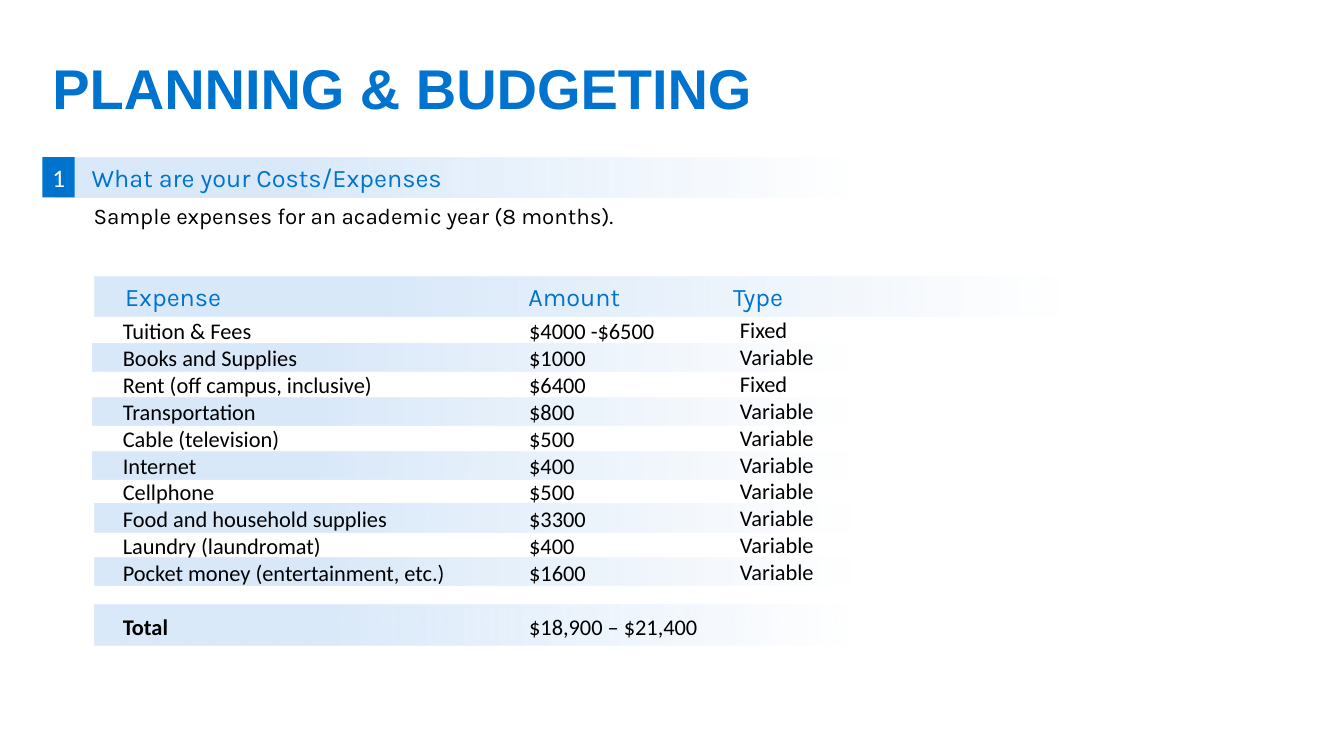
from pptx import Presentation
from pptx.dml.color import RGBColor as Rgb
from pptx.enum.shapes import MSO_SHAPE as Shape
from pptx.enum.text import MSO_ANCHOR as Anchor, MSO_AUTO_SIZE as Fit, PP_ALIGN as Align
from pptx.oxml.ns import qn
from pptx.util import Pt
from lxml.etree import SubElement as add_tag

PX = 9144
HUE = {"blue": "0073CF", "pale": "CFE3F8", "black": "000000", "white": "FFFFFF"}

deck = Presentation()
deck.slide_width, deck.slide_height = 1333 * PX, 750 * PX
slide = deck.slides.add_slide(deck.slide_layouts[5])


def write(shape, text, font="Calibri", size=16, hue="black", bold=False,
          align=Align.LEFT, anchor=Anchor.TOP, inset=10, tabs=(), space=1):
    frame = shape.text_frame
    frame.word_wrap = True
    frame.auto_size = Fit.NONE
    frame.vertical_anchor = anchor
    frame.margin_left = inset * PX
    frame.text = text
    for para in frame.paragraphs:
        para.alignment = align
        para.line_spacing = space
        if tabs:
            stops = add_tag(para._p.get_or_add_pPr(), qn("a:tabLst"))
            for x in tabs:
                add_tag(stops, qn("a:tab"), pos=str(x * PX), algn="l")
        for run in para.runs:
            run.font.name = font
            run.font.size = Pt(size)
            run.font.bold = bold
            run.font.color.rgb = Rgb.from_string(HUE[hue])
    return frame


def add_bar(x, y, w, h, fade=True):
    bar = slide.shapes.add_shape(Shape.RECTANGLE, x * PX, y * PX, w * PX, h * PX)
    bar.shadow.inherit = False
    bar.line.fill.background()
    if fade:
        bar.fill.gradient()
        bar.fill.gradient_angle = 0
        for stop, spot in zip(bar.fill.gradient_stops, (0.3, 1)):
            stop.position = spot
            stop.color.rgb = Rgb.from_string(HUE["pale"])
        tints = bar._element.spPr.iter(qn("a:srgbClr"))
        for tint, alpha in zip(list(tints), ("77000", "0")):
            add_tag(tint, qn("a:alpha"), val=alpha)
    else:
        bar.fill.solid()
        bar.fill.fore_color.rgb = Rgb.from_string(HUE["blue"])
    return bar


title = slide.shapes.title
title.left, title.top, title.width, title.height = 42 * PX, 56 * PX, 1150 * PX, 145 * PX
write(title, "PLANNING & BUDGETING", font="Arial", size=40, hue="blue", bold=True, space=0.9)

head = {"font": "Karla", "size": 18, "hue": "blue", "anchor": Anchor.MIDDLE}
write(add_bar(55, 156, 789, 40), "What are your Costs/Expenses", inset=36, **head)

for x, y, h in ((92, 341, 28), (92, 394, 28), (92, 448, 28),
                (94, 500, 28), (94, 553, 28), (94, 600, 40)):
    add_bar(x, y, 750, h)

note = slide.shapes.add_textbox(83 * PX, 196 * PX, 687 * PX, 40 * PX)
write(note, "Sample expenses for an academic year (8 months).", font="Karla")

write(add_bar(94, 274, 958, 40), "Expense\tAmount\tType", inset=30, tabs=(400, 603), **head)

costs = (
    ("Tuition & Fees", "$4000 -$6500", "Fixed"),
    ("Books and Supplies", "$1000", "Variable"),
    ("Rent (off campus, inclusive)", "$6400", "Fixed"),
    ("Transportation", "$800", "Variable"),
    ("Cable (television)", "$500", "Variable"),
    ("Internet", "$400", "Variable"),
    ("Cellphone", "$500", "Variable"),
    ("Food and household supplies", "$3300", "Variable"),
    ("Laundry (laundromat)", "$400", "Variable"),
    ("Pocket money (entertainment, etc.)", "$1600", "Variable"),
)
names, sums, types = zip(*costs)
for x, y, h, items, total in ((112, 310, 394, names, "Total"),
                              (515, 310, 394, sums, "$18,900 – $21,400"),
                              (724, 309, 367, types, "")):
    box = slide.shapes.add_textbox(x * PX, y * PX, 442 * PX, h * PX)
    lines = items + (total,) if total else items
    frame = write(box, "\n".join(lines))
    if total:
        last = frame.paragraphs[-1]
        last.space_before = Pt(19)
        last.runs[0].font.bold = total == "Total"

write(add_bar(42, 156, 32, 40, fade=False), "1", size=18, hue="white",
      align=Align.CENTER, anchor=Anchor.MIDDLE)

deck.save("out.pptx")
